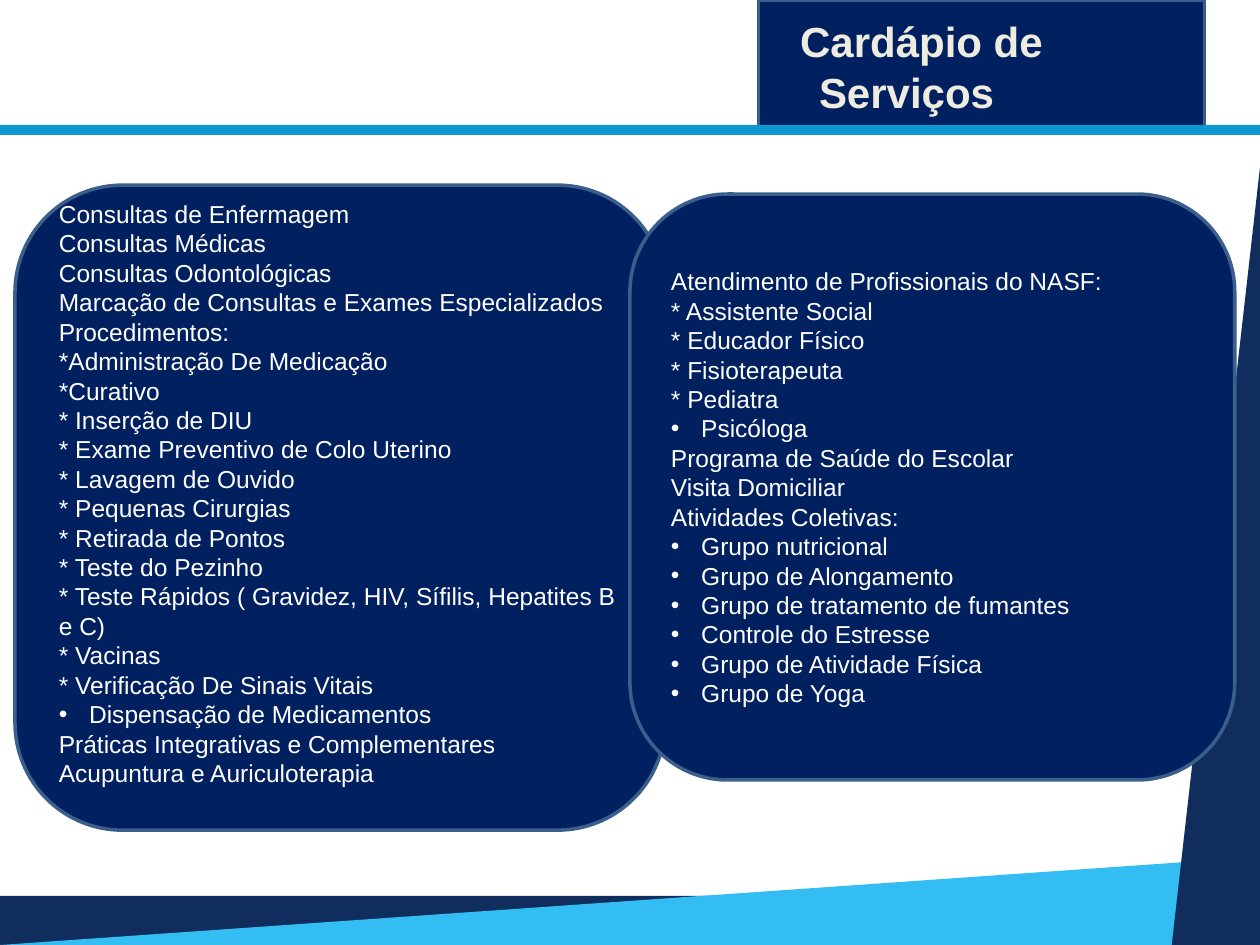
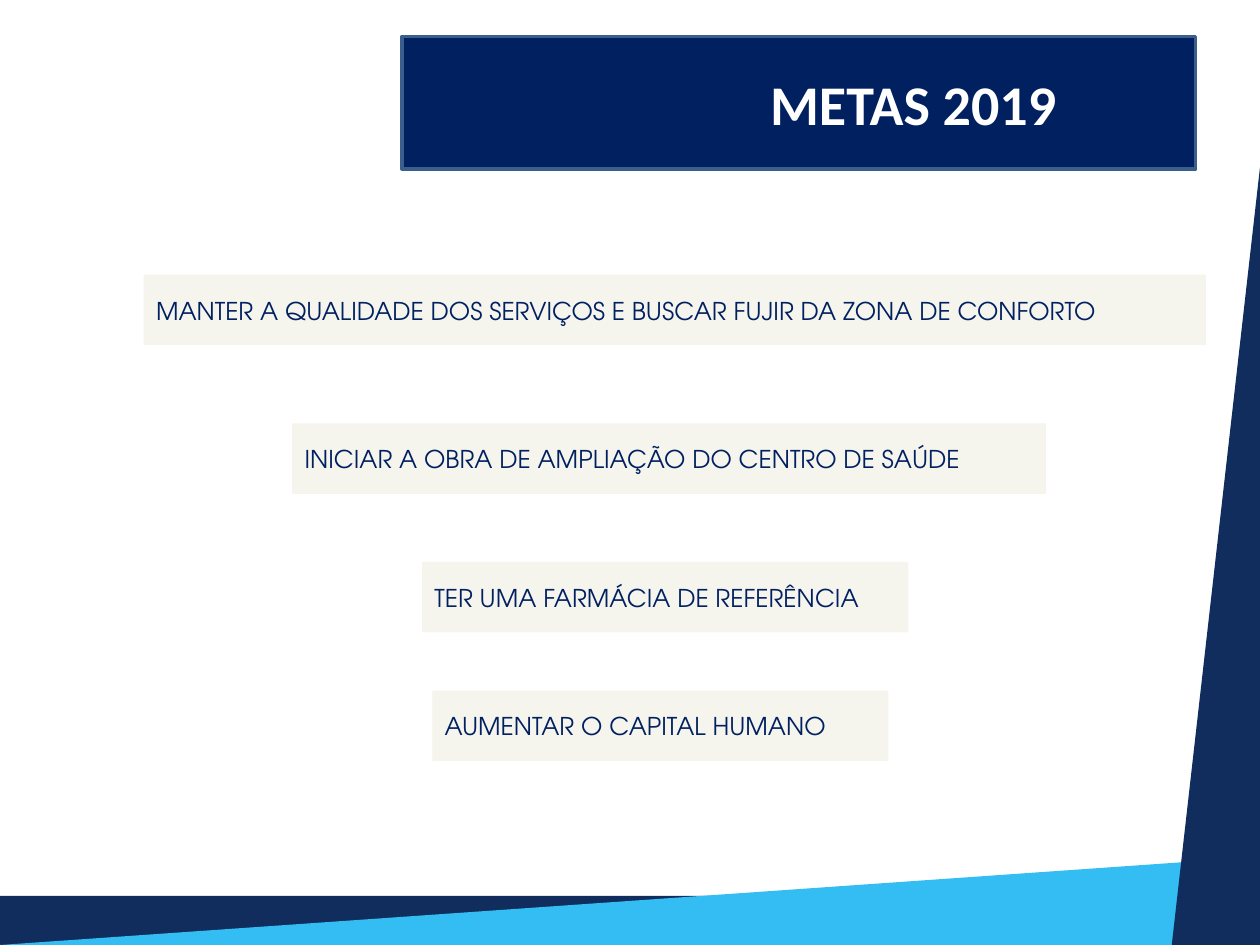
from lxml.etree import SubElement
from pptx import Presentation
from pptx.dml.color import RGBColor
from pptx.enum.shapes import MSO_SHAPE
from pptx.enum.text import MSO_ANCHOR, MSO_AUTO_SIZE, PP_ALIGN
from pptx.oxml.ns import qn
from pptx.util import Pt

NAVY = RGBColor(0x00, 0x20, 0x60)
NAVY_EDGE = RGBColor(0x10, 0x2D, 0x5D)
SKY = RGBColor(0x33, 0xBD, 0xF2)
RULE_BLUE = RGBColor(0x0F, 0x98, 0xCF)
OUTLINE = RGBColor(0x3A, 0x5F, 0x8C)
CREAM = RGBColor(0xEE, 0xEC, 0xE1)
PALE = RGBColor(0xF5, 0xF4, 0xED)
WHITE = RGBColor(0xFF, 0xFF, 0xFF)

WIDTH, HEIGHT = 720, 540
BULLET = "• "

MENU_TITLE = dict(name="Arial", size=Pt(24), bold=True, color=CREAM)
GOALS_TITLE = dict(name="Calibri", size=Pt(32), bold=True, color=WHITE)
SERVICE_TEXT = dict(name="Arial", size=Pt(14), color=WHITE)
GOAL_TEXT = dict(name="TeX Gyre Adventor", size=Pt(14), color=NAVY)

CLINIC_SERVICES = [
    "Consultas de Enfermagem",
    "Consultas Médicas",
    "Consultas Odontológicas",
    "Marcação de Consultas e Exames Especializados",
    "Procedimentos:",
    "*Administração De Medicação",
    "*Curativo",
    "* Inserção de DIU",
    "* Exame Preventivo de Colo Uterino",
    "* Lavagem de Ouvido",
    "* Pequenas Cirurgias",
    "* Retirada de Pontos",
    "* Teste do Pezinho",
    "* Teste Rápidos ( Gravidez, HIV, Sífilis, Hepatites B e C)",
    "* Vacinas",
    "* Verificação De Sinais Vitais",
    "• Dispensação de Medicamentos",
    "Práticas Integrativas e Complementares",
    "Acupuntura e Auriculoterapia",
]
COMMUNITY_SERVICES = [
    "Atendimento de Profissionais do NASF:",
    "* Assistente Social",
    "* Educador Físico",
    "* Fisioterapeuta",
    "* Pediatra",
    "• Psicóloga",
    "Programa de Saúde do Escolar",
    "Visita Domiciliar",
    "Atividades Coletivas:",
    "• Grupo nutricional",
    "• Grupo de Alongamento",
    "• Grupo de tratamento de fumantes",
    "• Controle do Estresse",
    "• Grupo de Atividade Física",
    "• Grupo de Yoga",
]
# left, top, width, text
GOALS = [
    (82.1, 157, 607, "MANTER A QUALIDADE DOS SERVIÇOS E BUSCAR FUJIR DA ZONA DE CONFORTO"),
    (167, 241.9, 430.6, "INICIAR A OBRA DE AMPLIAÇÃO DO CENTRO DE SAÚDE"),
    (241.2, 321.1, 277.9, "TER UMA FARMÁCIA DE REFERÊNCIA"),
    (247, 394.6, 260.6, "AUMENTAR O CAPITAL HUMANO"),
]


def paint(s, fill, outline=None):
    s.fill.solid()
    s.fill.fore_color.rgb = fill
    if outline is None:
        s.line.fill.background()
    else:
        s.line.color.rgb = outline
        s.line.width = Pt(2)


def add_box(slide, kind, left, top, width, height, fill, outline=None):
    s = slide.shapes.add_shape(kind, Pt(left), Pt(top), Pt(width), Pt(height))
    s.shadow.inherit = False
    paint(s, fill, outline)
    return s


def add_corner_triangle(slide, width, height, fill):
    """Right triangle whose square corner is the slide's bottom right corner."""
    center_x, center_y = WIDTH - width / 2, HEIGHT - height / 2
    s = add_box(slide, MSO_SHAPE.RIGHT_TRIANGLE, center_x - height / 2,
                center_y - width / 2, height, width, fill)
    s.rotation = 270


def add_backdrop(slide):
    add_box(slide, MSO_SHAPE.RECTANGLE, 0, 512, WIDTH, 28, NAVY_EDGE)
    add_corner_triangle(slide, WIDTH, 50.4, SKY)
    add_corner_triangle(slide, 50.4, 444.2, NAVY_EDGE)


def set_frame(tf, anchor, left=7.2, top=3.6, right=7.2, bottom=3.6):
    tf.word_wrap = True
    tf.auto_size = MSO_AUTO_SIZE.NONE
    tf.vertical_anchor = anchor
    tf.margin_left, tf.margin_right = Pt(left), Pt(right)
    tf.margin_top, tf.margin_bottom = Pt(top), Pt(bottom)


def add_text(p, text, style, align=PP_ALIGN.LEFT):
    p.alignment = align
    r = p.add_run()
    r.text = text
    for key, value in style.items():
        if key == "color":
            r.font.color.rgb = value
        else:
            setattr(r.font, key, value)


def set_indent(p, margin, first_line):
    pPr = p._p.get_or_add_pPr()
    pPr.set("marL", str(Pt(margin)))
    pPr.set("indent", str(Pt(first_line)))
    return pPr


def add_bullet(p):
    pPr = set_indent(p, 17.3, -17.3)
    SubElement(pPr, qn("a:buFont"), typeface="Arial")
    SubElement(pPr, qn("a:buChar"), char="•")


def set_title(slide, text, style, left, top, width, align, inset=7.2):
    s = slide.shapes.title
    s.left, s.top, s.width, s.height = Pt(left), Pt(top), Pt(width), Pt(75.6)
    paint(s, NAVY, OUTLINE)
    set_frame(s.text_frame, MSO_ANCHOR.MIDDLE, left=inset, top=7.2, bottom=7.2)
    p = s.text_frame.paragraphs[0]
    add_text(p, text, style, align)
    return p


def add_service_panel(slide, left, top, width, height, services, bottom=3.6):
    s = add_box(slide, MSO_SHAPE.ROUNDED_RECTANGLE, left, top, width, height, NAVY, OUTLINE)
    tf = s.text_frame
    set_frame(tf, MSO_ANCHOR.MIDDLE, bottom=bottom)
    for i, service in enumerate(services):
        p = tf.add_paragraph() if i else tf.paragraphs[0]
        if service.startswith(BULLET):
            add_bullet(p)
        add_text(p, service.removeprefix(BULLET), SERVICE_TEXT)


def add_goal(slide, left, top, width, text):
    s = add_box(slide, MSO_SHAPE.RECTANGLE, left, top, width, 40.3, PALE)
    set_frame(s.text_frame, MSO_ANCHOR.TOP)
    p = s.text_frame.paragraphs[0]
    p.line_spacing = 1.5
    add_text(p, text, GOAL_TEXT)


def add_slide(prs):
    slide = prs.slides.add_slide(prs.slide_layouts[5])
    add_backdrop(slide)
    return slide


def build_services(prs):
    slide = add_slide(prs)
    p = set_title(slide, "Cardápio de Serviços", MENU_TITLE, 433.4, 0, 254.9, PP_ALIGN.LEFT)
    set_indent(p, 27.4, -10.8)
    add_box(slide, MSO_SHAPE.RECTANGLE, 0, 71.3, WIDTH, 5.8, RULE_BLUE)
    add_service_panel(slide, 8.6, 105.8, 371.5, 368.6, CLINIC_SERVICES, bottom=20)
    add_service_panel(slide, 360, 110.9, 345.6, 334.8, COMMUNITY_SERVICES)


def build_goals(prs):
    slide = add_slide(prs)
    set_title(slide, "METAS 2019", GOALS_TITLE, 229.7, 20.9, 453.6, PP_ALIGN.CENTER, inset=138)
    for goal in GOALS:
        add_goal(slide, *goal)


def main():
    prs = Presentation()
    prs.slide_width, prs.slide_height = Pt(WIDTH), Pt(HEIGHT)
    build_services(prs)
    build_goals(prs)
    prs.save("out.pptx")


if __name__ == "__main__":
    main()
